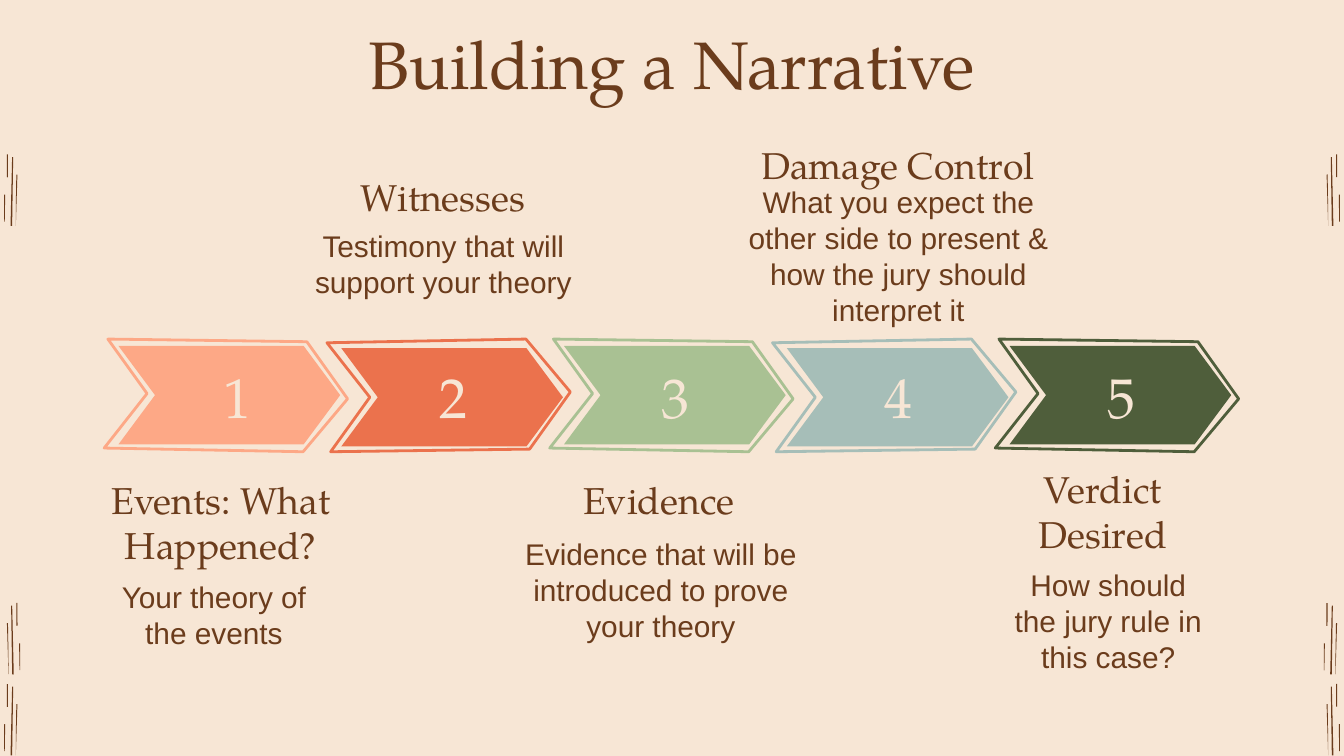
from dataclasses import dataclass
from math import cos, radians, sin

from pptx import Presentation
from pptx.dml.color import RGBColor
from pptx.enum.text import MSO_ANCHOR, MSO_AUTO_SIZE, PP_ALIGN
from pptx.util import Cm, Pt

CREAM = "F7E6D5"
BROWN = "6B3C1C"
SERIF = "TeX Gyre Pagella"
SANS = "Arial"
MARGIN = Cm(0.25)

ARROW_PITCH = 4.21
ARROW = [(0, 0), (0.69, 0.93), (0, 1.86), (3.5, 1.86), (4.19, 0.93), (3.5, 0)]
OUTLINE = [(0.07, 0), (3.83, 0.05), (4.6, 1.13), (3.76, 2.13), (0, 2.06), (0.81, 1.03)]
OUTLINE_HEIGHT = 2.13

STROKES = [
    [(0.15, 0.43), (0.15, 0), (0.13, 0), (0.13, 0.43)],
    [(0.08, 0.76), (0.08, 1.27), (0.09, 1.27), (0.1, 0.76)],
    [(0.23, 1.35), (0.25, 0.05), (0.23, 0.05), (0.2, 1.35)],
    [(0.3, 0.97), (0.3, 1.22), (0.3, 1.35), (0.33, 0.38), (0.31, 0.38)],
]
STROKE_GROUPS = [
    (0, 1, 12.93),
    (0.46, -1, 11.4),
    (0, 1, 2.92),
    (25.4, -1, 12.93),
    (24.94, 1, 11.4),
    (25.4, -1, 2.92),
]


@dataclass
class Step:
    heading: str
    heading_place: tuple
    body: str
    body_place: tuple
    color: str
    number_center: float


STEPS = [
    Step("Events: What Happened?", (1.37, 8.77, 5.61),
         "Your theory of the events", (1.9, 10.69, 4.29), "FDA886", 4.48),
    Step("Witnesses", (6.23, 3.05, 4.29),
         "Testimony that will support your theory", (5.52, 4.06, 5.72), "EB724D", 8.57),
    Step("Evidence", (10.31, 8.77, 4.29),
         "Evidence that will be introduced to prove your theory", (9.63, 9.88, 5.72),
         "A9C193", 12.77),
    Step("Damage Control", (13.9, 2.44, 6.15),
         "What you expect the other side to present & how the jury should interpret it",
         (13.74, 3.23, 6.48), "A6BEB8", 16.98),
    Step("Verdict Desired", (18.7, 8.56, 4.29),
         "How should the jury rule in this case?", (18.8, 10.46, 4.29), "4F5E3B", 21.19),
]


def rgb(value):
    return RGBColor.from_string(value)


def write(box, text, size, font, color=BROWN, anchor=MSO_ANCHOR.TOP, space_after=0):
    frame = box.text_frame
    frame.word_wrap = True
    frame.auto_size = MSO_AUTO_SIZE.NONE
    frame.vertical_anchor = anchor
    frame.margin_left = frame.margin_right = MARGIN
    frame.margin_top = frame.margin_bottom = MARGIN
    frame.text = text
    para = frame.paragraphs[0]
    para.alignment = PP_ALIGN.CENTER
    para.space_before = Pt(0)
    para.space_after = Pt(space_after)
    para.font.size = Pt(size)
    para.font.name = font
    para.font.color.rgb = rgb(color)


def add_text(page, place, height, *content, **options):
    left, top, width = place
    box = page.shapes.add_textbox(Cm(left), Cm(top), Cm(width), Cm(height))
    write(box, *content, **options)


def add_polygon(page, points, fill=None, line=None):
    corners = [(Cm(x), Cm(y)) for x, y in points]
    builder = page.shapes.build_freeform(*corners[0], scale=1.0)
    builder.add_line_segments(corners[1:], close=True)
    shape = builder.convert_to_shape()
    shape.shadow.inherit = False
    if fill:
        shape.fill.solid()
        shape.fill.fore_color.rgb = rgb(fill)
    else:
        shape.fill.background()
    if line:
        shape.line.color.rgb = rgb(line)
        shape.line.width = Pt(1.5)
    else:
        shape.line.fill.background()
    return shape


def turn(x, y, degrees):
    angle = radians(degrees)
    return x * cos(angle) - y * sin(angle), x * sin(angle) + y * cos(angle)


def add_turned_polygon(page, points, degrees, fill):
    shape = add_polygon(page, [turn(x, y, -degrees) for x, y in points], fill=fill)
    center_x, center_y = turn(
        shape.left + shape.width / 2, shape.top + shape.height / 2, degrees
    )
    shape.left = round(center_x - shape.width / 2)
    shape.top = round(center_y - shape.height / 2)
    shape.rotation = degrees


def add_strokes(page, origin, direction, top):
    degrees = 300 if direction == 1 else 60
    for stroke in STROKES:
        points = [(origin + direction * x, top + y) for x, y in stroke]
        add_turned_polygon(page, points, degrees, BROWN)


def add_arrow(page, index, color):
    shift = index * ARROW_PITCH
    flipped = index % 2 == 1
    arrow_top = 6.58 if flipped else 6.54
    add_polygon(page, [(2.24 + shift + x, arrow_top + y) for x, y in ARROW], fill=color)
    outline = [
        (1.97 + shift + x, 6.41 + (OUTLINE_HEIGHT - y if flipped else y))
        for x, y in OUTLINE
    ]
    add_polygon(page, outline, line=color)


def add_step(page, index, step):
    add_arrow(page, index, step.color)
    add_text(page, step.heading_place, 1.04, step.heading, 20, SERIF, space_after=16)
    add_text(page, step.body_place, 1.52, step.body, 16, SANS, space_after=16)
    number_place = (step.number_center - 1.48, 6.96, 2.96)
    add_text(page, number_place, 1.04, str(index + 1), 30, SERIF,
             color=CREAM, anchor=MSO_ANCHOR.MIDDLE)


def add_title(page, text):
    title = page.shapes.title
    title.left, title.top = Cm(1.98), Cm(0.18)
    title.width, title.height = Cm(21.44), Cm(1.7)
    write(title, text, 36, SERIF)


def main():
    deck = Presentation()
    deck.slide_width, deck.slide_height = Cm(25.4), Cm(14.29)
    page = deck.slides.add_slide(deck.slide_layouts[5])
    page.background.fill.solid()
    page.background.fill.fore_color.rgb = rgb(CREAM)
    add_title(page, "Building a Narrative")
    for group in STROKE_GROUPS:
        add_strokes(page, *group)
    for index, step in enumerate(STEPS):
        add_step(page, index, step)
    deck.save("out.pptx")


if __name__ == "__main__":
    main()
